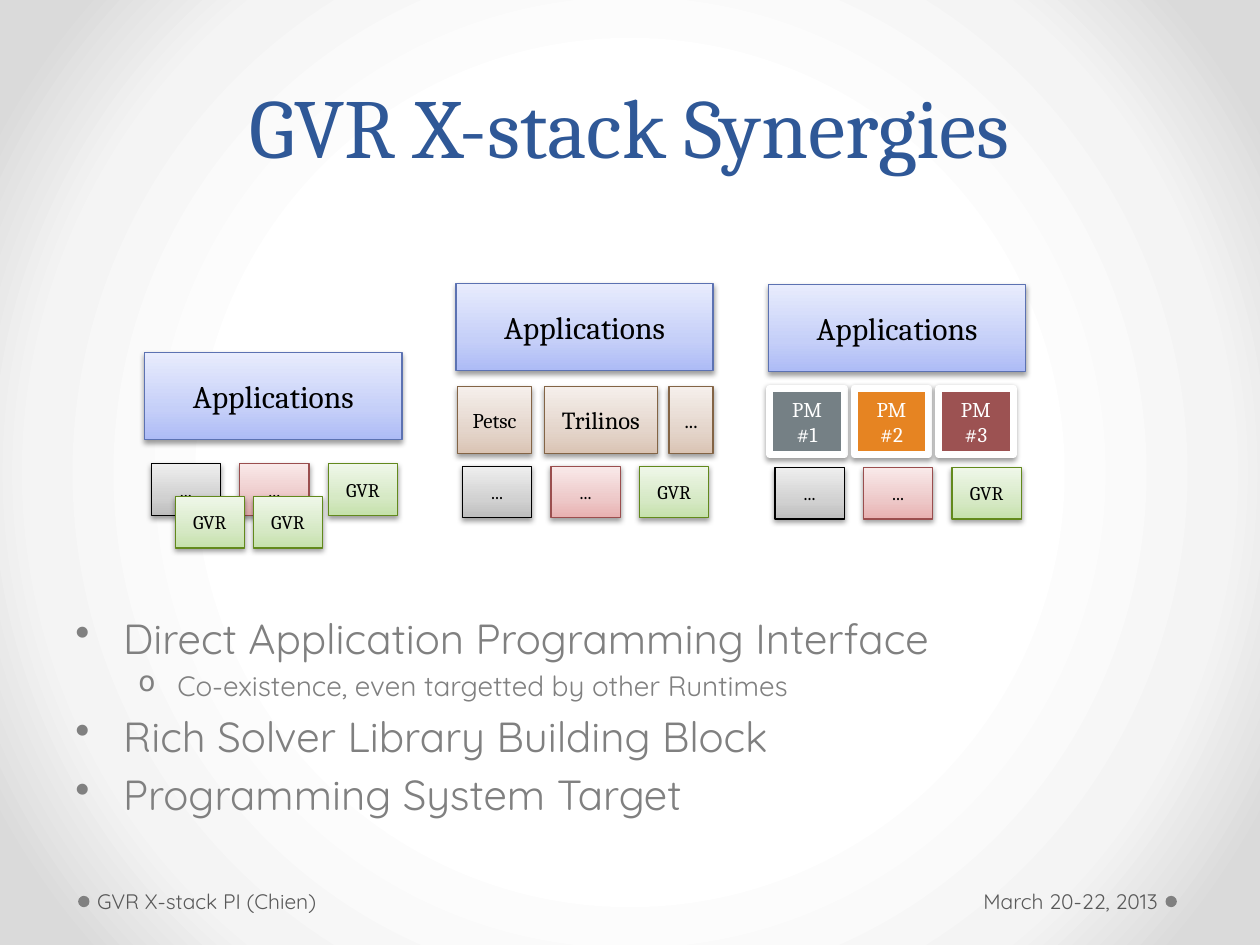
from dataclasses import dataclass

from lxml import etree
from pptx import Presentation
from pptx import util as u
from pptx.dml.color import RGBColor
from pptx.enum import shapes, text
from pptx.oxml.ns import qn

COLS, ROWS = 100, 75
W, H = u.Inches(10), u.Inches(7.5)


class Theme:
    serif, sans = "Cambria", "Quicksand"
    title, body, note, black, white = "2F5897", "808080", "595959", "000000", "FFFFFF"
    size = dict(title=48, body=24, sub=16, apps=18, large=14, label=12, small=11)
    background = [(50, "FFFFFF"), (76, "F4F4F4"), (92, "DADADA")]
    tint = {
        "apps": ("5C72B2", ("ADBBF6", "C5CFF8", "E8ECFD")),
        "gvr": ("62891C", ("C5E1AB", "D6E9C5", "EFF7E9")),
        "red": ("9A4E4E", ("E8B0B0", "EDC8C8", "F9E9E9")),
        "gray": ("000000", ("BDBDBD", "D1D1D1", "EEEEEE")),
        "solver": ("836445", ("DAC4B4", "E4D5CB", "F5EFEB")),
    }
    models = ["758085", "E68422", "9C5252"]


@dataclass
class Box:
    x: float
    y: float
    w: float
    h: float

    def inner(self, dx, dy, w, h):
        return Box(self.x + dx, self.y + dy, w, h)

    def emu(self):
        cw, rh = W / COLS, H / ROWS
        return [round(v) for v in (self.x * cw, self.y * rh, self.w * cw, self.h * rh)]


def apply(obj, **values):
    for name, value in values.items():
        setattr(obj, name, value)


def rgb(value):
    return RGBColor.from_string(value)


def child(parent, tag, **attrs):
    return etree.SubElement(parent, qn(tag), {k: str(v) for k, v in attrs.items()})


def set_stops(root, stops):
    grad = root.find(".//" + qn("a:gradFill"))
    gs_list = grad.find(qn("a:gsLst"))
    for gs in list(gs_list):
        gs_list.remove(gs)
    for pos, color in stops:
        child(child(gs_list, "a:gs", pos=pos * 1000), "a:srgbClr", val=color)
    return grad


def add_run(p, words, size, font, color):
    r = p.add_run()
    r.text = words
    apply(r.font, size=u.Pt(size), name=font)
    r.font.color.rgb = rgb(color)


def add_background(s):
    s.background.fill.gradient()
    grad = set_stops(s._element, Theme.background)
    grad.remove(grad.find(qn("a:lin")))
    circle = child(grad, "a:path", path="circle")
    child(circle, "a:fillToRect", l=50000, t=50000, r=50000, b=50000)


def add_block(s, box, words, size, tint=None, solid=None):
    sp = s.shapes.add_shape(shapes.MSO_SHAPE.RECTANGLE, *box.emu())
    if solid:
        sp.fill.solid()
        sp.fill.fore_color.rgb = rgb(solid)
        line, width, color = Theme.white, 4, Theme.white
    else:
        line, fills = Theme.tint[tint]
        sp.fill.gradient()
        sp.fill.gradient_angle = 90
        set_stops(sp._element, zip((0, 35, 100), fills))
        width, color = 0.75, Theme.black
    sp.line.color.rgb = rgb(line)
    sp.line.width = u.Pt(width)
    sp.shadow.inherit = False
    effects = sp._element.spPr.find(qn("a:effectLst"))
    shadow = child(effects, "a:outerShdw", blurRad=u.Pt(3.1), dist=u.Pt(1.6),
                   dir=5400000, rotWithShape=0)
    child(child(shadow, "a:srgbClr", val=Theme.black), "a:alpha", val=38000)
    tf = sp.text_frame
    apply(tf, word_wrap=True, vertical_anchor=text.MSO_ANCHOR.MIDDLE)
    for i, line_text in enumerate(words.split("\n")):
        p = tf.add_paragraph() if i else tf.paragraphs[0]
        p.alignment = text.PP_ALIGN.CENTER
        add_run(p, line_text, Theme.size[size], Theme.serif, color)


def add_stack(s, box, runtime_dx, runtime_dy):
    add_block(s, box.inner(0, 0, box.w, 6.9), "Applications", "apps", "apps")
    runtimes = [("...", "gray"), ("...", "red"), ("GVR", "gvr")]
    for i, (words, tint) in enumerate(runtimes):
        cell = box.inner(runtime_dx + 7.03 * i, runtime_dy, 5.5, 4.1)
        add_block(s, cell, words, "small", tint)


def add_direct_stack(s, box):
    add_stack(s, box, 0.5, 8.8)
    for dx in (2.4, 8.6):
        add_block(s, box.inner(dx, 11.4, 5.5, 4.1), "GVR", "small", "gvr")


def add_solver_stack(s, box):
    add_stack(s, box, 0.5, 14.5)
    solvers = [("Petsc", 0.1, 5.9, "label"), ("Trilinos", 7, 9, "large"), ("...", 16.9, 3.5, "label")]
    for words, dx, w, size in solvers:
        add_block(s, box.inner(dx, 8.2, w, 5.3), words, size, "solver")


def add_model_stack(s, box):
    add_stack(s, box, 0.5, 14.5)
    for i, color in enumerate(Theme.models):
        add_block(s, box.inner(0.1 + 6.7 * i, 8.2, 5.9, 5.3), f"PM\n#{i + 1}", "label", solid=color)


def add_title(s, box):
    sp = s.shapes.title
    apply(sp, **dict(zip(("left", "top", "width", "height"), box.emu())))
    tf = sp.text_frame
    apply(tf, word_wrap=True, vertical_anchor=text.MSO_ANCHOR.BOTTOM)
    p = tf.paragraphs[0]
    apply(p, alignment=text.PP_ALIGN.CENTER, line_spacing=u.Pt(58))
    add_run(p, "GVR X-stack Synergies", Theme.size["title"], Theme.serif, Theme.title)


def add_bullets(s, box, items):
    tf = s.shapes.add_textbox(*box.emu()).text_frame
    tf.word_wrap = True
    levels = [("body", "•", 0.38, 0.38), ("sub", "o", 0.81, 0.31)]
    for i, (level, words) in enumerate(items):
        p = tf.add_paragraph() if i else tf.paragraphs[0]
        name, mark, margin, hang = levels[level]
        size = Theme.size[name]
        apply(p, level=level, space_before=u.Pt(0.2 * size))
        pr = p._p.get_or_add_pPr()
        pr.set("marL", str(u.Inches(margin)))
        pr.set("indent", str(-u.Inches(hang)))
        child(pr, "a:buChar", char=mark)
        add_run(p, words, size, Theme.sans, Theme.body)


def add_footer(s, box, words, align, dot_x, margins):
    dot = s.shapes.add_shape(shapes.MSO_SHAPE.OVAL, *Box(dot_x, 71.1, 0.9, 0.9).emu())
    dot.fill.solid()
    dot.fill.fore_color.rgb = rgb(Theme.body)
    dot.line.fill.background()
    dot.shadow.inherit = False
    tf = s.shapes.add_textbox(*box.emu()).text_frame
    left, right = margins
    apply(tf, word_wrap=True, vertical_anchor=text.MSO_ANCHOR.MIDDLE,
          margin_left=u.Inches(left), margin_right=u.Inches(right))
    p = tf.paragraphs[0]
    p.alignment = align
    add_run(p, words, Theme.size["label"], Theme.sans, Theme.note)


def main():
    prs = Presentation()
    apply(prs, slide_width=W, slide_height=H)
    s = prs.slides.add_slide(prs.slide_layouts[5])
    add_background(s)
    add_title(s, Box(5, 2, 90, 12.4))
    add_bullets(s, Box(5, 48.1, 90, 21.4), [
        (0, "Direct Application Programming Interface"),
        (1, "Co-existence, even targetted by other Runtimes"),
        (0, "Rich Solver Library Building Block"),
        (0, "Programming System Target"),
    ])
    add_direct_stack(s, Box(11.5, 28, 20.4, 15.5))
    add_solver_stack(s, Box(36.2, 22.5, 20.4, 18.6))
    add_model_stack(s, Box(61, 22.6, 20.4, 18.6))
    add_footer(s, Box(69.6, 69.5, 22.8, 4), "March 20-22, 2013", text.PP_ALIGN.RIGHT, 92.5, (0.1, 0.05))
    add_footer(s, Box(7.2, 69.5, 31.1, 4), "GVR X-stack PI (Chien)", text.PP_ALIGN.LEFT, 6.2, (0.05, 0.1))
    prs.save("out.pptx")


if __name__ == "__main__":
    main()
